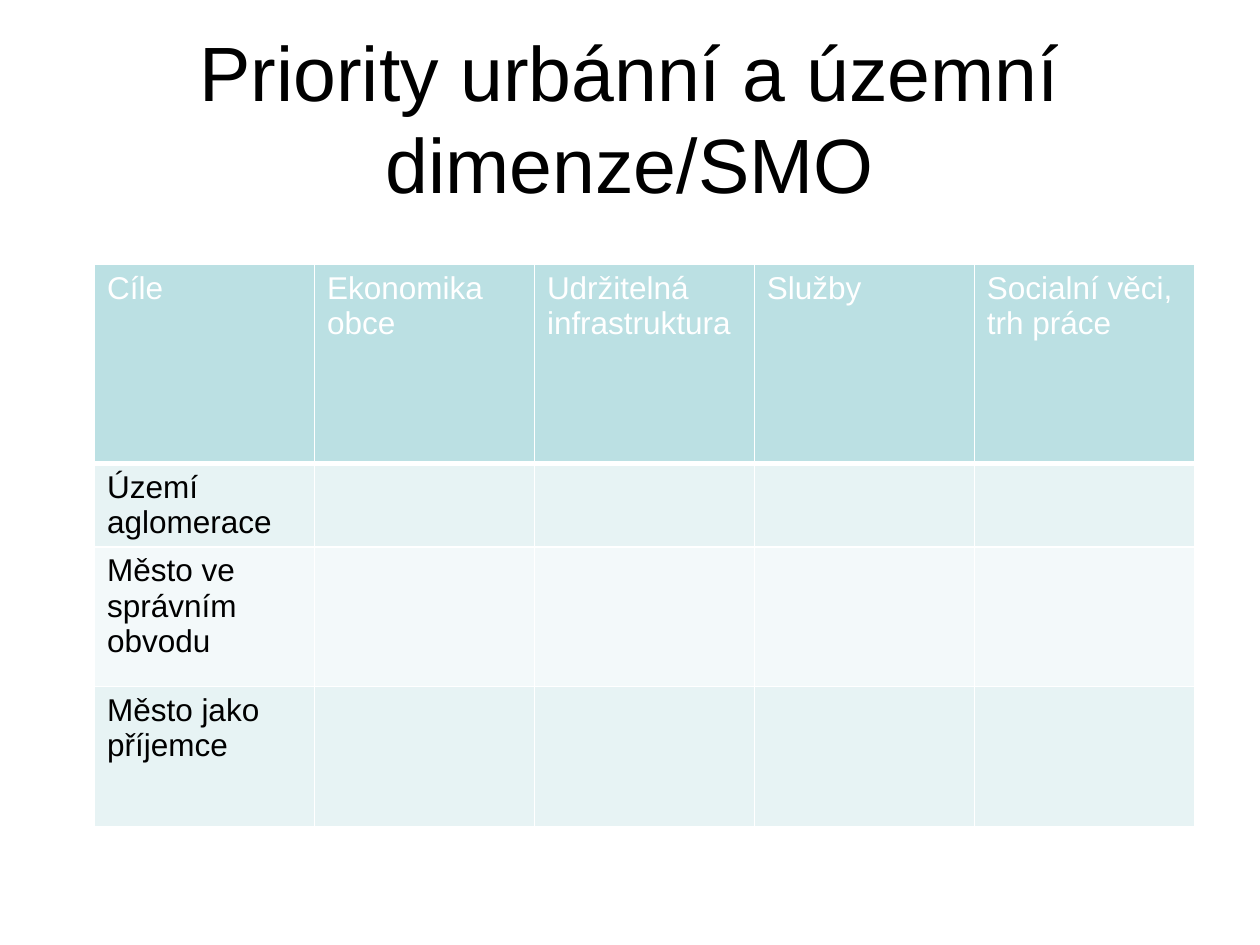
from lxml.etree import SubElement
from pptx import Presentation
from pptx.dml.color import RGBColor as Rgb
from pptx.enum.text import MSO_ANCHOR as Anchor, MSO_AUTO_SIZE as Auto, PP_ALIGN as Align
from pptx.oxml.ns import qn
from pptx.util import Inches, Pt

HUES = {"ink": "000000", "white": "FFFFFF", "head": "BBE0E3",
        "odd": "E7F3F4", "even": "F3F9FA"}
HEADS = ["Cíle", "Ekonomika obce", "Udržitelná infrastruktura", "Služby",
         "Socialní věci, trh práce"]
GOALS = ["Území aglomerace", "Město ve správním obvodu", "Město jako příjemce"]


class Deck:
    """Holds the style and the current slide."""

    def __init__(self, face, hues):
        self.face, self.hues = face, hues
        self.show = Presentation()
        self.show.slide_width, self.show.slide_height = Inches(10), Inches(7.5)
        self.slide = self.show.slides.add_slide(self.show.slide_layouts[5])

    def color(self, name):
        return Rgb.from_string(self.hues[name])

    def style(self, para, size, hue, align):
        para.alignment = align
        font = para.font
        font.name, font.size, font.bold = self.face, Pt(size), False
        font.color.rgb = self.color(hue)

    def title(self, text, left, top, width, height):
        box = self.slide.shapes.title
        box.left, box.top = Inches(left), Inches(top)
        box.width, box.height = Inches(width), Inches(height)
        frame = box.text_frame
        frame.text = text
        frame.word_wrap, frame.auto_size = True, Auto.NONE
        frame.vertical_anchor = Anchor.MIDDLE
        self.style(frame.paragraphs[0], 44, "ink", Align.CENTER)

    def edge(self, cell, side, width):
        line = SubElement(cell._tc.get_or_add_tcPr(), qn(f"a:ln{side}"), w=str(Pt(width)))
        fill = SubElement(line, qn("a:solidFill"))
        SubElement(fill, qn("a:srgbClr"), val=self.hues["white"])

    def cell(self, cell, text, row):
        cell.text = text
        self.style(cell.text_frame.paragraphs[0], 18, "ink" if row else "white", Align.LEFT)
        for side in "LRTB":
            thick = (row, side) in ((0, "B"), (1, "T"))
            self.edge(cell, side, 3 if thick else 1)
        cell.fill.solid()
        band = "odd" if row % 2 else "even"
        cell.fill.fore_color.rgb = self.color(band if row else "head")

    def table(self, rows, left, top, width, highs):
        size = len(rows), len(rows[0])
        frame = self.slide.shapes.add_table(
            *size, Inches(left), Inches(top), Inches(width), Inches(sum(highs)))
        grid = frame.table
        for r, (texts, high) in enumerate(zip(rows, highs)):
            grid.rows[r].height = Inches(high)
            for c, text in enumerate(texts):
                self.cell(grid.cell(r, c), text, r)

    def save(self):
        self.show.save("out.pptx")


def main():
    deck = Deck("Arial", HUES)
    deck.title("Priority urbánní a územní dimenze/SMO", 0.5, 0.3, 9, 1.25)
    rows = [HEADS] + [[goal] + [""] * (len(HEADS) - 1) for goal in GOALS]
    deck.table(rows, 0.75, 2.1, 8.73, [1.58, 0.66, 1.11, 1.11])
    deck.save()


if __name__ == "__main__":
    main()
